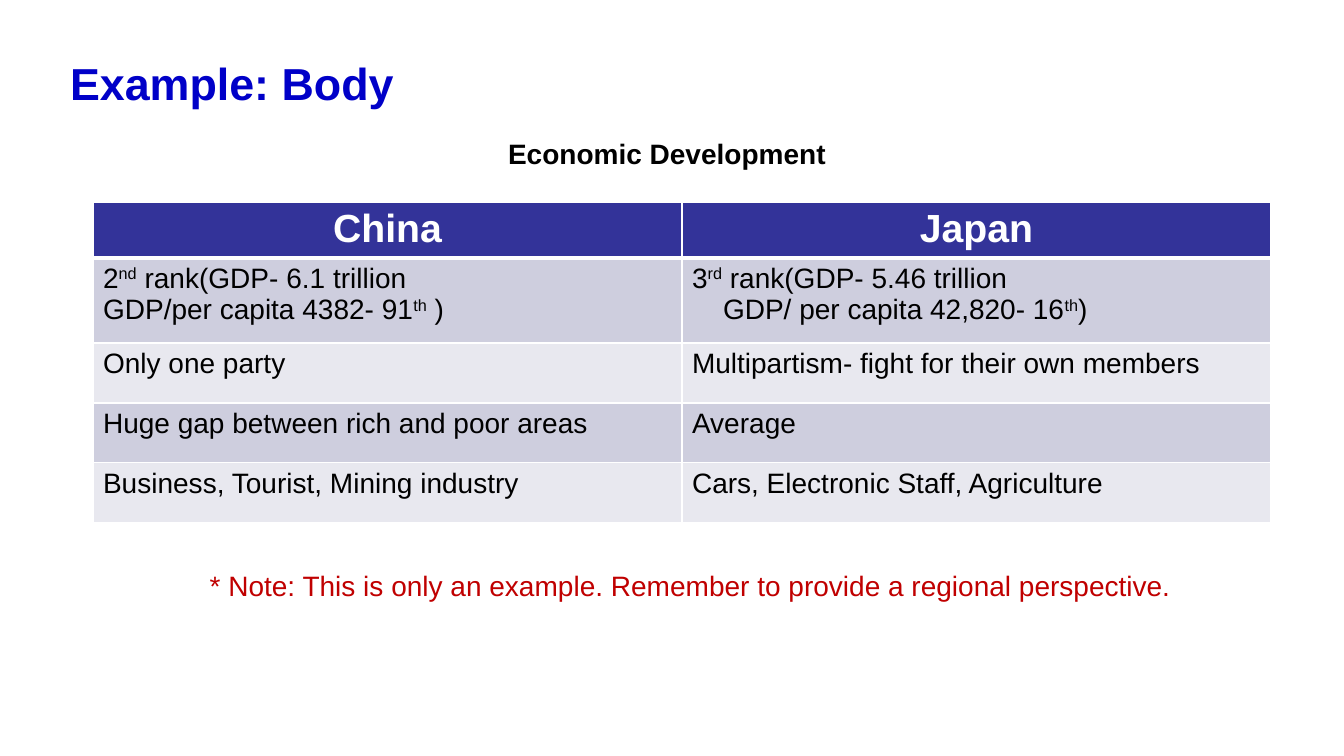
"""Build the slide comparing the economic development of China and Japan."""
from lxml import etree
from pptx import Presentation
from pptx.dml.color import RGBColor
from pptx.enum.text import MSO_ANCHOR, MSO_AUTO_SIZE, PP_ALIGN
from pptx.oxml.ns import qn
from pptx.util import Emu, Pt

LEFT, CENTER = PP_ALIGN.LEFT, PP_ALIGN.CENTER
TOP, MIDDLE = MSO_ANCHOR.TOP, MSO_ANCHOR.MIDDLE
NO_FIT = MSO_AUTO_SIZE.NONE

TITLE = "Example: Body"
TOPIC = "Economic Development"
NOTE = "* Note: This is only an example. Remember to provide a regional perspective."
COUNTRIES = ("China", "Japan")
COMPARISON = [
    (["2^nd^ rank(GDP- 6.1 trillion", "GDP/per capita 4382- 91^th^ )"],
     ["3^rd^ rank(GDP- 5.46 trillion", ">GDP/ per capita 42,820- 16^th^)"]),
    (["Only one party"], ["Multipartism- fight for their own members"]),
    (["Huge gap between rich and poor areas"], ["Average"]),
    (["Business, Tourist, Mining industry"], ["Cars, Electronic Staff, Agriculture"]),
]
COLORS = {"title": "0000C8", "text": "000000", "note": "C00000", "header": "333399",
          "odd": "CECEDE", "even": "E8E8EF", "white": "FFFFFF"}
FONT = "Arial"
SLIDE_W, SLIDE_H = 1344, 756
TITLE_BOX = (60, 47, 1214, 72)
TOPIC_BOX = (60, 132, 1214, 69)
NOTE_BOX = (109, 563, 1163, 44)
TABLE_X, TABLE_Y, COLUMN_W = 93, 202, 589
ROW_HEIGHTS = (56, 85, 60, 60, 60)
INDENT = 31
RULE, HEADER_RULE = 1, 3


def px(length):
    return Emu(round(length * 12192000 / SLIDE_W))


def write(frame, lines, size, color, bold=False, align=LEFT):
    """Write lines, raising text between carets and indenting after a > sign."""
    for index, line in enumerate(lines):
        paragraph = frame.add_paragraph() if index else frame.paragraphs[0]
        paragraph.alignment = align
        paragraph.space_before = Pt(0)
        if line.startswith(">"):
            paragraph._p.get_or_add_pPr().set("marL", str(px(INDENT)))
        for part, words in enumerate(line.lstrip(">").split("^")):
            run = paragraph.add_run()
            run.text = words
            font = run.font
            font.name, font.size, font.bold = FONT, Pt(size), bold
            font.color.rgb = RGBColor.from_string(COLORS[color])
            if part % 2:
                run._r.get_or_add_rPr().set("baseline", "30000")


def set_box(shape, box, anchor):
    shape.left, shape.top, shape.width, shape.height = map(px, box)
    frame = shape.text_frame
    frame.word_wrap, frame.auto_size, frame.vertical_anchor = True, NO_FIT, anchor
    return frame


def set_borders(cell, top, bottom):
    properties = cell._tc.get_or_add_tcPr()
    for side, width in (("L", RULE), ("R", RULE), ("T", top), ("B", bottom)):
        line = etree.SubElement(properties, qn(f"a:ln{side}"), w=str(Pt(width)))
        fill = etree.SubElement(line, qn("a:solidFill"))
        etree.SubElement(fill, qn("a:srgbClr"), val=COLORS["white"])


def add_comparison(slide):
    rows = [tuple([name] for name in COUNTRIES)] + COMPARISON
    table = slide.shapes.add_table(
        len(rows), len(COUNTRIES), px(TABLE_X), px(TABLE_Y),
        px(COLUMN_W * len(COUNTRIES)), px(sum(ROW_HEIGHTS))).table
    table.first_row = table.horz_banding = False
    for column in table.columns:
        column.width = px(COLUMN_W)
    for r, (row, height) in enumerate(zip(rows, ROW_HEIGHTS)):
        table.rows[r].height = px(height)
        band = "header" if r == 0 else "odd" if r % 2 else "even"
        for c, lines in enumerate(row):
            cell = table.cell(r, c)
            set_borders(cell, HEADER_RULE if r == 1 else RULE, HEADER_RULE if r == 0 else RULE)
            cell.fill.solid()
            cell.fill.fore_color.rgb = RGBColor.from_string(COLORS[band])
            if r == 0:
                write(cell.text_frame, lines, 28, "white", True, CENTER)
            else:
                write(cell.text_frame, lines, 20, "text")


def main():
    deck = Presentation()
    deck.slide_width, deck.slide_height = px(SLIDE_W), px(SLIDE_H)
    slide = deck.slides.add_slide(deck.slide_layouts[5])
    write(set_box(slide.shapes.title, TITLE_BOX, MIDDLE), [TITLE], 32, "title", True)
    for words, box, anchor, color, bold in (
            (TOPIC, TOPIC_BOX, TOP, "text", True), (NOTE, NOTE_BOX, MIDDLE, "note", False)):
        shape = slide.shapes.add_textbox(*map(px, box))
        write(set_box(shape, box, anchor), [words], 20, color, bold, CENTER)
    add_comparison(slide)
    deck.save("out.pptx")


if __name__ == "__main__":
    main()
